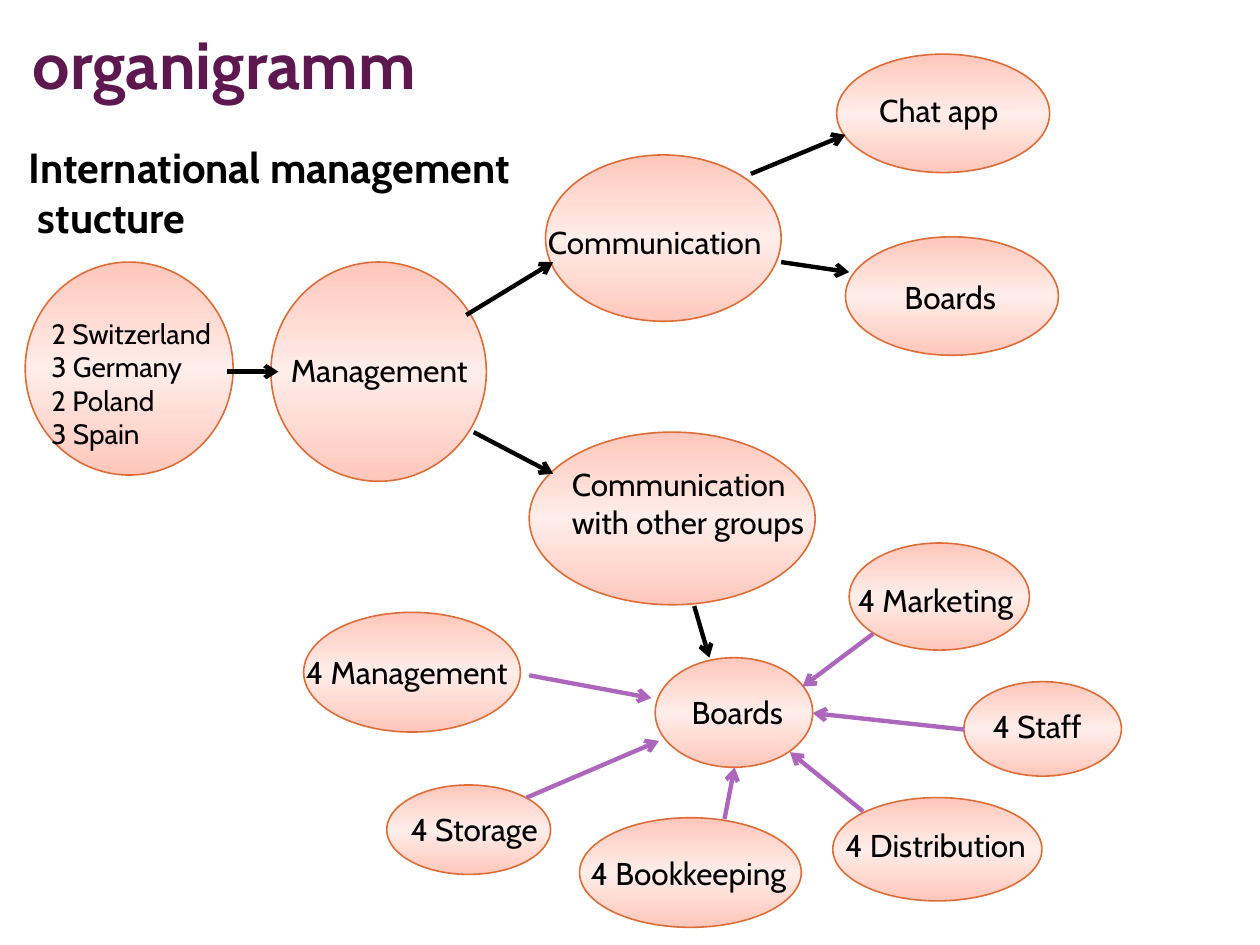
from dataclasses import dataclass

from copy import deepcopy

from pptx import Presentation
from pptx.dml.color import RGBColor
from pptx.enum.shapes import MSO_CONNECTOR, MSO_SHAPE
from pptx.enum.text import MSO_ANCHOR, MSO_AUTO_SIZE, PP_ALIGN
from pptx.oxml.ns import qn
from pptx.oxml.xmlchemy import OxmlElement
from pptx.util import Inches, Pt

ELLIPSE = MSO_SHAPE.OVAL
STRAIGHT = MSO_CONNECTOR.STRAIGHT
TOP = MSO_ANCHOR.TOP
LEFT = PP_ALIGN.LEFT
FIXED = MSO_AUTO_SIZE.NONE


@dataclass(frozen=True)
class Theme:
    font: str = "Cabin"
    title: str = "5D194F"
    ink: str = "000000"
    purple: str = "AC66BB"
    outline: str = "DE6C36"
    rose: str = "FFC7BB"
    pale: str = "FFEDE9"
    title_size: float = 38
    heading_size: float = 24
    label_size: float = 18
    list_size: float = 16
    outline_width: float = 0.91
    arrow_width: float = 2.5


@dataclass(frozen=True)
class Box:
    left: float
    top: float
    width: float
    height: float

    def inside(self, left, top, width, height):
        """Return a box whose offset is measured from this one."""
        return Box(self.left + left, self.top + top, width, height)

    def lengths(self):
        return [Inches(v) for v in (self.left, self.top, self.width, self.height)]


THEME = Theme()


def rgb(code):
    return RGBColor.from_string(code)


def write_lines(frame, lines, size, color=THEME.ink, bold=False):
    frame.word_wrap = True
    frame.auto_size = FIXED
    frame.vertical_anchor = TOP
    for index, line in enumerate(lines):
        para = frame.paragraphs[0] if index == 0 else frame.add_paragraph()
        para.alignment = LEFT
        para.space_before = Pt(0)
        span = para.add_run()
        span.text = line
        span.font.name = THEME.font
        span.font.size = Pt(size)
        span.font.bold = bold
        span.font.color.rgb = rgb(color)


def fill_placeholder(shape, box, lines, size, color, bold):
    shape.left, shape.top, shape.width, shape.height = box.lengths()
    write_lines(shape.text_frame, lines, size, color, bold)


def shade(shape):
    """Fill with a vertical gradient that is palest in the middle."""
    shape.fill.gradient()
    shape.fill.gradient_angle = 90
    for stop in shape.fill.gradient_stops:
        stop.color.rgb = rgb(THEME.rose)
    stops = shape._element.spPr.find(qn("a:gradFill")).find(qn("a:gsLst"))
    stops.insert(1, deepcopy(stops[0]))
    middle = shape.fill.gradient_stops[1]
    middle.position = 0.5
    middle.color.rgb = rgb(THEME.pale)


def draw_node(page, box, label_place, lines, size=THEME.label_size):
    oval = page.shapes.add_shape(ELLIPSE, *box.lengths())
    oval.shadow.inherit = False
    shade(oval)
    oval.line.color.rgb = rgb(THEME.outline)
    oval.line.width = Pt(THEME.outline_width)
    label = page.shapes.add_textbox(*box.inside(*label_place).lengths())
    write_lines(label.text_frame, lines, size)


def draw_arrow(page, region, ends, color):
    x1, y1, x2, y2 = ends
    arrow = page.shapes.add_connector(
        STRAIGHT,
        Inches(region.left + x1), Inches(region.top + y1),
        Inches(region.left + x2), Inches(region.top + y2),
    )
    arrow.line.color.rgb = rgb(color)
    arrow.line.width = Pt(THEME.arrow_width)
    properties = arrow._element.spPr
    head = OxmlElement("a:tailEnd")
    head.set("type", "arrow")
    properties.find(qn("a:ln")).append(head)
    properties.append(OxmlElement("a:effectLst"))


def build_heading(page, region):
    title, body = page.placeholders
    fill_placeholder(title, region.inside(0.03, 0, 7.92, 1.25), ["organigramm"],
                     THEME.title_size, THEME.title, True)
    fill_placeholder(body, region.inside(0, 0.94, 4.48, 1.3),
                     ["International management", "stucture"],
                     THEME.heading_size, THEME.ink, True)
    for para, margin in zip(body.text_frame.paragraphs, (0, 0.07)):
        settings = para._p.get_or_add_pPr()
        settings.set("marL", str(Inches(margin)))
        settings.set("indent", "0")
        settings.append(OxmlElement("a:buNone"))


def build_management(page, region):
    countries = ["2 Switzerland", "3 Germany", "2 Poland", "3 Spain"]
    draw_node(page, region.inside(0, 1.68, 1.65, 1.69), (0.11, 0.38, 1.69, 1.73),
              countries, THEME.list_size)
    nodes = [
        ("Management", (1.95, 1.68, 1.71, 1.74), (0.06, 0.66, 1.73, 0.7)),
        ("Communication", (4.13, 0.83, 1.87, 1.32), (-0.08, 0.49, 2.09, 0.7)),
        ("Chat app", (6.44, 0.03, 1.69, 0.94), (0.24, 0.24, 1.34, 0.7)),
        ("Communication with other groups", (4, 3.03, 2.27, 1.37),
         (0.24, 0.21, 2.17, 1)),
        ("Boards", (6.51, 1.48, 1.69, 0.94), (0.37, 0.28, 1.15, 0.4)),
    ]
    for name, place, label_place in nodes:
        draw_node(page, region.inside(*place), label_place, [name])
    arrows = [
        (1.6, 2.55, 2.01, 2.55),
        (3.5, 2.1, 4.19, 1.68),
        (5.76, 0.98, 6.51, 0.67),
        (6, 1.68, 6.54, 1.76),
        (3.56, 3.03, 4.19, 3.36),
    ]
    for ends in arrows:
        draw_arrow(page, region, ends, THEME.ink)


def build_groups(page, region):
    """Draw the shared board and the groups that point to it."""
    nodes = [
        ("4 Staff", (5.25, 1.11, 1.25, 0.75), (0.13, 0.15, 1.05, 0.4)),
        ("4 Distribution", (4.21, 2.03, 1.66, 0.82), (0, 0.18, 2.01, 0.4)),
        ("4 Storage", (0.67, 1.93, 1.3, 0.71), (0.09, 0.15, 1.28, 0.7)),
        ("4 Management", (0.01, 0.56, 1.72, 0.95), (-0.08, 0.27, 1.99, 0.7)),
        ("4 Bookkeeping", (2.2, 2.19, 1.76, 0.87), (-0.01, 0.24, 1.96, 0.7)),
        ("4 Marketing", (4.34, 0.01, 1.43, 0.85), (-0.03, 0.25, 1.54, 0.7)),
        ("Boards", (2.8, 0.92, 1.25, 0.87), (0.19, 0.23, 1.1, 0.7)),
    ]
    for name, place, label_place in nodes:
        draw_node(page, region.inside(*place), label_place, [name])
    draw_arrow(page, region, (3.11, 0.51, 3.23, 0.92), THEME.ink)
    arrows = [
        (4.53, 0.73, 3.97, 1.15),
        (5.25, 1.49, 4.05, 1.36),
        (4.45, 2.14, 3.87, 1.67),
        (3.35, 2.2, 3.43, 1.79),
        (1.78, 2.03, 2.83, 1.58),
        (1.8, 1.06, 2.77, 1.24),
    ]
    for ends in arrows:
        draw_arrow(page, region, ends, THEME.purple)


def main():
    deck = Presentation()
    deck.slide_width, deck.slide_height = Inches(10), Inches(7.5)
    page = deck.slides.add_slide(deck.slide_layouts[1])
    build_heading(page, Box(0.13, 0.13, 7.95, 2.24))
    build_management(page, Box(0.2, 0.4, 8.2, 4.4))
    build_groups(page, Box(2.4, 4.3, 6.5, 3.06))
    deck.save("out.pptx")


if __name__ == "__main__":
    main()
